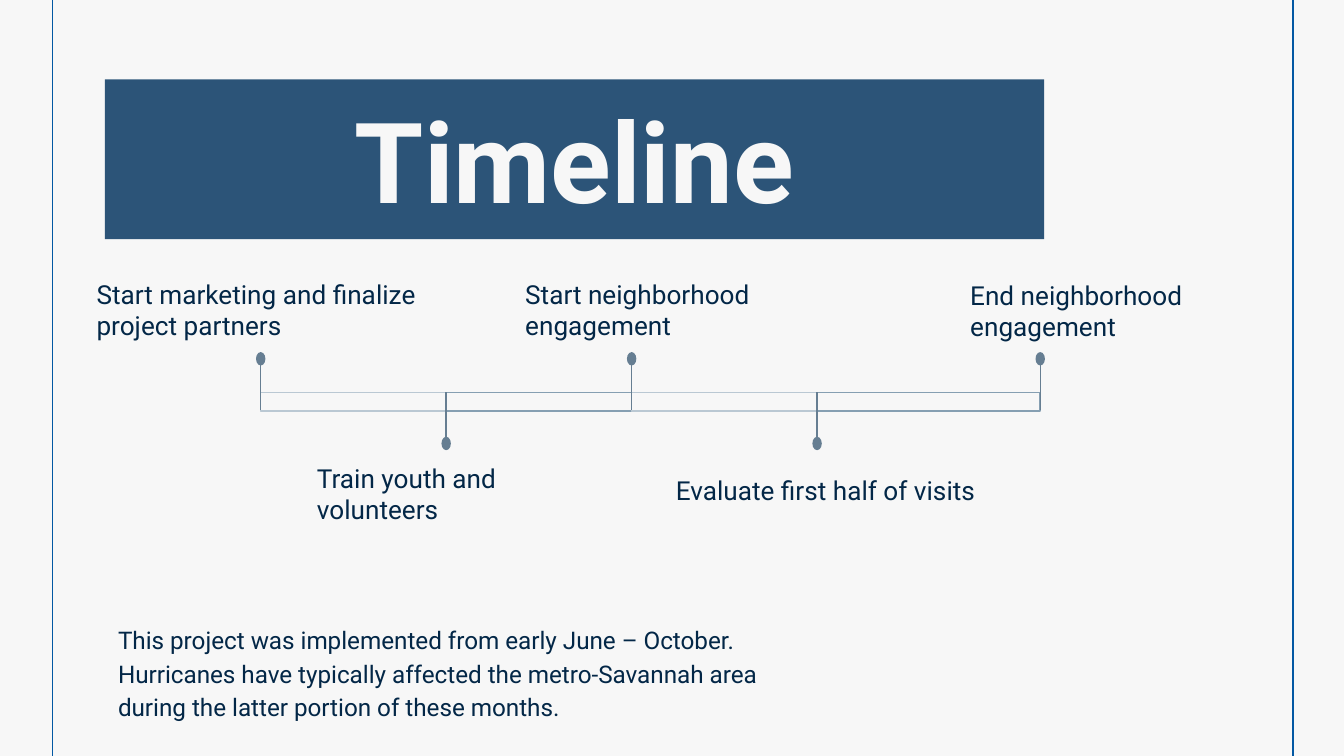
from itertools import pairwise

from lxml import etree
from pptx import Presentation
from pptx import util as u
from pptx.dml.color import RGBColor
from pptx.enum import shapes, text
from pptx.oxml.ns import qn

COLORS = {
    "background": "F7F7F7",
    "banner": "03345F",
    "border": "0358A3",
    "ink": "032747",
    "pin": "667E92",
    "light_bar": "BAC8D3",
    "dark_bar": "869FB2",
}
SLIDE_W = 10
SLIDE_H = SLIDE_W * 9 / 16
BAR_TOP, BAR_H = 2.92, 0.14
DOT_W, DOT_H = 0.07, 0.1
INSETS = ("margin_left", "margin_top", "margin_right", "margin_bottom")
BODY = {"size": u.Pt(14), "name": "Roboto", "bold": False}
SUMMARY_FONT = {**BODY, "size": u.Pt(13)}
TITLE_FONT = {**BODY, "size": u.Pt(60), "bold": True}

MILESTONES = [
    (1.94, True, "Start marketing and finalize project partners", (0.62, 1.97, 2.8, 0.47)),
    (3.32, False, "Train youth and volunteers", (2.26, 3.34, 2.47, 0.7)),
    (4.7, True, "Start neighborhood engagement", (3.81, 1.97, 2.56, 0.57)),
    (6.08, False, "Evaluate first half of visits", (4.93, 3.43, 2.47, 0.42)),
    (7.74, True, "End neighborhood engagement", (7.12, 1.98, 2.25, 0.7)),
]
SUMMARY = (
    "This project was implemented from early June – October. "
    "Hurricanes have typically affected the metro-Savannah area "
    "during the latter portion of these months."
)


def color(name):
    return RGBColor.from_string(COLORS[name])


def write(holder, wording, font, ink="ink", anchor=text.MSO_ANCHOR.TOP,
          align=text.PP_ALIGN.LEFT, spacing=None):
    frame = holder.text_frame
    frame.word_wrap = True
    frame.vertical_anchor = anchor
    for inset in INSETS:
        setattr(frame, inset, u.Inches(0.1))
    paragraph = frame.paragraphs[0]
    paragraph.alignment = align
    paragraph.line_spacing = spacing
    run = paragraph.add_run()
    run.text = wording
    for key, value in font.items():
        setattr(run.font, key, value)
    run.font.color.rgb = color(ink)


def add_label(slide, wording, box, font=BODY, **layout):
    label = slide.shapes.add_textbox(*map(u.Inches, box))
    write(label, wording, font, **layout)


def add_solid(slide, kind, box, fill):
    solid = slide.shapes.add_shape(kind, *map(u.Inches, box))
    solid.shadow.inherit = False
    solid.fill.solid()
    solid.fill.fore_color.rgb = color(fill)
    solid.line.fill.background()
    return solid


def add_line(slide, x, start, end, stroke):
    line = slide.shapes.add_connector(
        shapes.MSO_CONNECTOR.STRAIGHT, *map(u.Inches, (x, start, x, end)))
    line.line.color.rgb = color(stroke)
    line.line.width = u.Pt(0.75)
    etree.SubElement(line._element.spPr, qn("a:effectLst"))


def add_bar(slide, left, right, stroke):
    bar = slide.shapes.add_shape(
        shapes.MSO_SHAPE.RECTANGLE,
        *map(u.Inches, (left, BAR_TOP, right - left, BAR_H)))
    bar.shadow.inherit = False
    bar.fill.background()
    bar.line.color.rgb = color(stroke)
    bar.line.width = u.Pt(0.75)


def add_pin(slide, x, above):
    start, end, dot_top = (2.68, 3.05, 2.62) if above else (3.29, BAR_TOP, 3.25)
    add_line(slide, x, start, end, "pin")
    add_solid(slide, shapes.MSO_SHAPE.OVAL,
              (x - DOT_W / 2, dot_top, DOT_W, DOT_H), "pin")


def add_banner(slide):
    banner = add_solid(slide, shapes.MSO_SHAPE.RECTANGLE,
                       (0.78, 0.59, 6.99, 1.19), "banner")
    tint = banner._element.spPr.find(qn("a:solidFill"))[0]
    etree.SubElement(tint, qn("a:alpha"), val="83000")
    write(banner, "Timeline", TITLE_FONT, "background",
          text.MSO_ANCHOR.BOTTOM, text.PP_ALIGN.CENTER)


def add_timeline(slide):
    stops = [milestone[0] for milestone in MILESTONES]
    for index, (left, right) in enumerate(pairwise(stops)):
        add_bar(slide, left, right, "dark_bar" if index % 2 else "light_bar")
    for x, above, wording, box in MILESTONES:
        add_pin(slide, x, above)
        add_label(slide, wording, box)


def main():
    deck = Presentation()
    deck.slide_width, deck.slide_height = u.Inches(SLIDE_W), u.Inches(SLIDE_H)
    slide = deck.slides.add_slide(deck.slide_layouts[6])
    slide.background.fill.solid()
    slide.background.fill.fore_color.rgb = color("background")
    for x in (9.62, 0.39):
        add_line(slide, x, 0, SLIDE_H, "border")
    add_banner(slide)
    add_label(slide, SUMMARY, (0.78, 4.19, 5.42, 1.28), SUMMARY_FONT,
              anchor=text.MSO_ANCHOR.BOTTOM, spacing=1.15)
    add_timeline(slide)
    deck.save("out.pptx")


if __name__ == "__main__":
    main()
